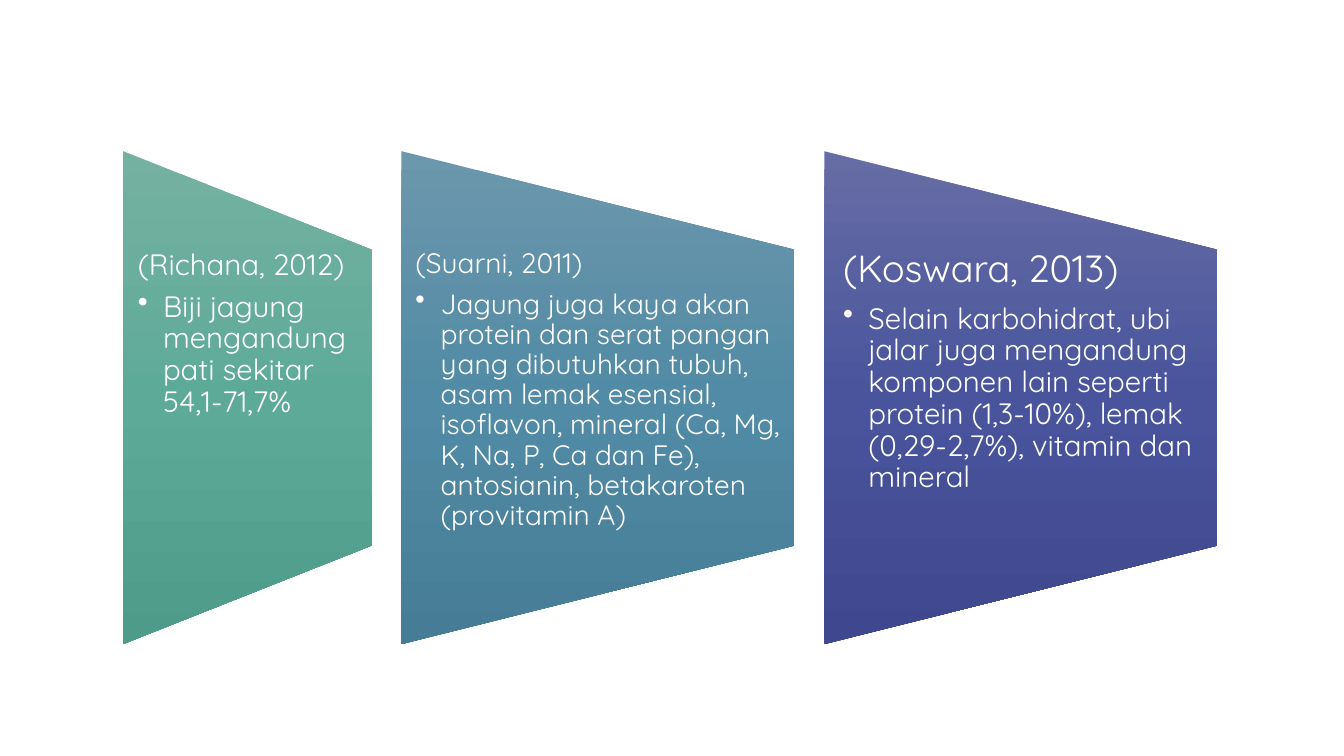
from dataclasses import dataclass

from lxml import etree
from pptx import Presentation
from pptx.dml.color import RGBColor
from pptx.enum.shapes import MSO_SHAPE
from pptx.enum.text import MSO_ANCHOR
from pptx.oxml.ns import qn
from pptx.util import Pt

TRAPEZE = MSO_SHAPE.FLOWCHART_MANUAL_OPERATION
ANCHOR = MSO_ANCHOR.TOP


@dataclass(frozen=True)
class Theme:
    font: str = "Quicksand"
    text: str = "FFFFFF"
    green: tuple = ("75B1A1", "5EAA98", "4F9B89")
    blue: tuple = ("6C97AC", "528BA5", "467C96")
    indigo: tuple = ("666DA4", "4A549C", "3F488E")
    small: int = 20
    mid: int = 21
    large: int = 27


THEME = Theme()

# Row of panels, in points
LEFT, TOP, HIGH, GAP = 88, 108, 352, 21.2

# Width, colours, side inset, head size, body size, head, body
PANELS = [
    (177.6, THEME.green, 10.5, THEME.mid, THEME.mid, "(Richana, 2012)",
     "Biji jagung mengandung pati sekitar 54,1-71,7%"),
    (280.8, THEME.blue, 10, THEME.small, THEME.small, "(Suarni, 2011)",
     "Jagung juga kaya akan protein dan serat pangan yang dibutuhkan tubuh, "
     "asam lemak esensial, isoflavon, mineral (Ca, Mg, K, Na, P, Ca dan Fe), "
     "antosianin, betakaroten (provitamin A)"),
    (280.8, THEME.indigo, 13.5, THEME.large, THEME.mid, "(Koswara, 2013)",
     "Selain karbohidrat, ubi jalar juga mengandung komponen lain seperti "
     "protein (1,3-10%), lemak (0,29-2,7%), vitamin dan mineral"),
]


def apply(target, values):
    for name, value in values.items():
        setattr(target, name, value)


def shade(shape, colors):
    """Fill with evenly spaced stops, running down the page."""
    shape.fill.gradient()
    shape.fill.gradient_angle = 180  # the shape itself is turned by 270
    stops = shape._element.spPr.find(qn("a:gradFill")).find(qn("a:gsLst"))
    for stop in list(stops):
        stops.remove(stop)
    for i, color in enumerate(colors):
        pos = str(100000 * i // (len(colors) - 1))
        stop = etree.SubElement(stops, qn("a:gs"), pos=pos)
        etree.SubElement(stop, qn("a:srgbClr"), val=color)


def add_panel(slide, left, width, colors):
    x = left + (width - HIGH) / 2
    y = TOP + (HIGH - width) / 2
    shape = slide.shapes.add_shape(TRAPEZE, Pt(x), Pt(y), Pt(HIGH), Pt(width))
    shape.rotation = 270
    shape.shadow.inherit = False
    shape.line.fill.background()
    shade(shape, colors)


def add_bullet(para):
    para.level = 1
    props = para._p.get_or_add_pPr()
    props.set("marL", str(Pt(18)))
    props.set("indent", str(-Pt(18)))
    etree.SubElement(props, qn("a:buChar"), char="•")


def set_para(para, text, size, after):
    para.text = text
    apply(para, {"line_spacing": 0.9, "space_after": Pt(round(size * after, 1))})
    apply(para.font, {"name": THEME.font, "size": Pt(size)})
    para.font.color.rgb = RGBColor.from_string(THEME.text)


def add_text(slide, left, width, inset, sizes, texts):
    box = slide.shapes.add_textbox(
        Pt(left), Pt(TOP + HIGH / 5), Pt(width), Pt(HIGH * 3 / 5))
    frame = box.text_frame
    apply(frame, {
        "word_wrap": True, "vertical_anchor": ANCHOR,
        "margin_left": Pt(inset), "margin_right": Pt(inset),
        "margin_top": 0, "margin_bottom": 0,
    })
    set_para(frame.paragraphs[0], texts[0], sizes[0], 0.35)
    body = frame.add_paragraph()
    body.space_after = Pt(0)
    body.line_spacing = 0.9
    add_bullet(body)
    set_para(body, texts[1], sizes[1], 0.15)


def main():
    prs = Presentation()
    apply(prs, {"slide_width": Pt(960), "slide_height": Pt(540)})
    slide = prs.slides.add_slide(prs.slide_layouts[6])

    # Panels from left to right, each with its text
    left = LEFT
    for width, colors, inset, head, body, title, note in PANELS:
        add_panel(slide, left, width, colors)
        add_text(slide, left, width, inset, (head, body), (title, note))
        left += width + GAP

    prs.save("out.pptx")


if __name__ == "__main__":
    main()
